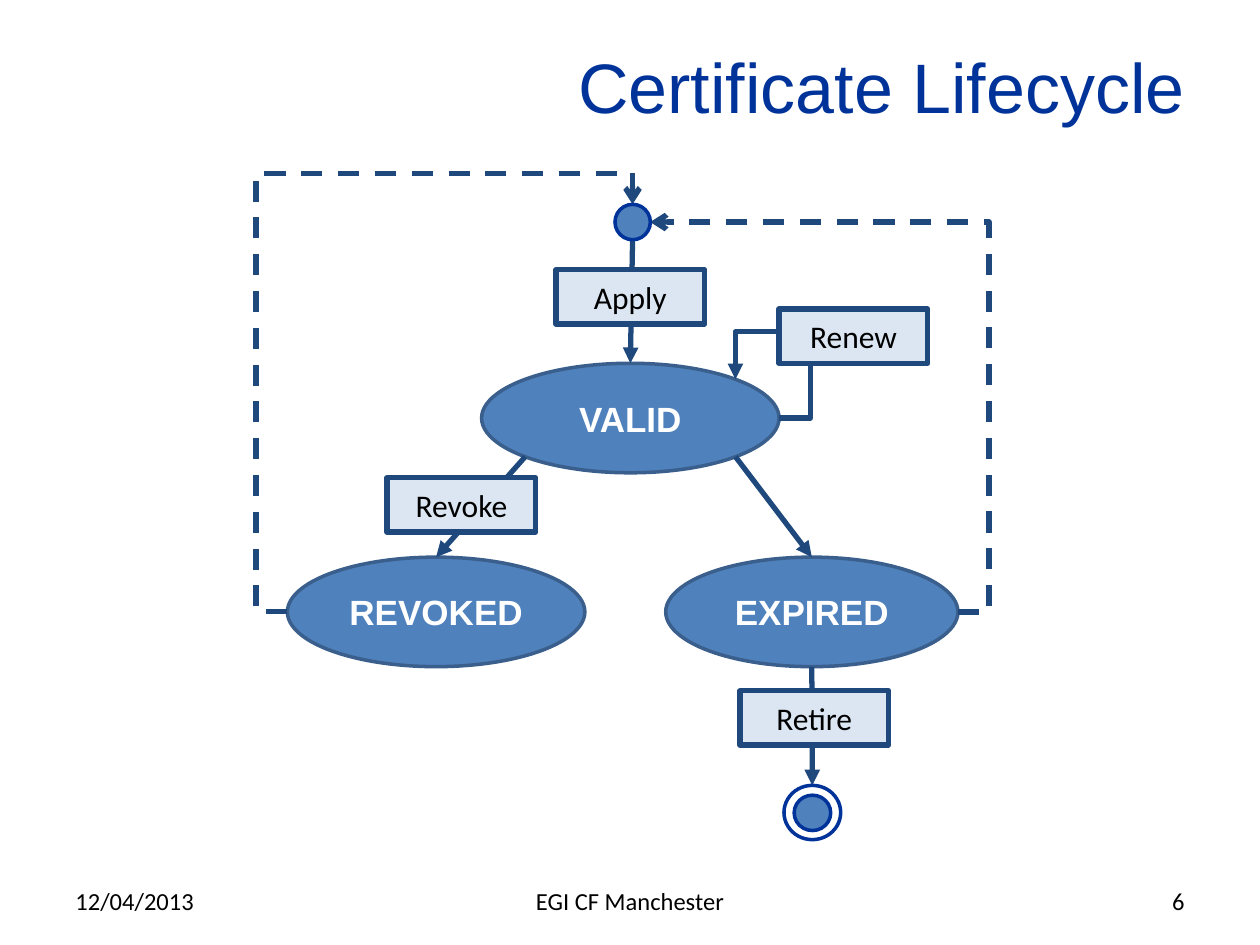
from collections import namedtuple
from math import sqrt

from pptx import Presentation
from pptx import util as u
from pptx.dml.color import RGBColor
from pptx.enum import dml, shapes, text
from pptx.oxml.ns import qn
from lxml import etree

Box = namedtuple("Box", "x y w h")
Pt = u.Pt
SHAPE = shapes.MSO_SHAPE
ALIGN = text.PP_ALIGN
ANCHOR = text.MSO_ANCHOR


class Theme:
    title = dict(name="Arial", size=40, color="003399")
    footer = dict(name="Calibri", size=14, color="000000")
    state = dict(name="Arial", size=20, color="FFFFFF", bold=True)
    action = dict(name="Calibri", size=18, color="000000")
    state_fill, state_line = "4F81BD", "3A5F8C"
    action_fill, flow = "DCE6F2", "1F497D"
    marker_line, white = "003399", "FFFFFF"
    thin, thick = 2, 3


# Compass points of an ellipse, as fractions of its box
NEAR, FAR = 0.5 - sqrt(0.125), 0.5 + sqrt(0.125)
PORTS = dict(n=(0.5, 0), s=(0.5, 1), w=(0, 0.5), e=(1, 0.5),
             ne=(FAR, NEAR), sw=(NEAR, FAR), se=(FAR, FAR))


def port(box, side):
    fx, fy = PORTS[side]
    return box.x + fx * box.w, box.y + fy * box.h


def inside(area, x, y, w, h):
    return Box(area.x + x, area.y + y, w, h)


def write(sp, words, style, align, anchor=ANCHOR.MIDDLE):
    tf = sp.text_frame
    for key, value in dict(word_wrap=True, vertical_anchor=anchor).items():
        setattr(tf, key, value)
    p = tf.paragraphs[0]
    p.alignment = align
    r = p.add_run()
    r.text = words
    font = dict(style, size=Pt(style["size"]))
    r.font.color.rgb = RGBColor.from_string(font.pop("color"))
    for key, value in font.items():
        setattr(r.font, key, value)


def add_label(s, box, words, style, align, anchor=ANCHOR.MIDDLE):
    write(s.shapes.add_textbox(*map(Pt, box)), words, style, align, anchor)


def add_node(s, kind, box, fill, line, width, words=None, style=None):
    sp = s.shapes.add_shape(kind, *map(Pt, box))
    sp.shadow.inherit = False
    sp.fill.solid()
    sp.fill.fore_color.rgb = RGBColor.from_string(fill)
    sp.line.color.rgb = RGBColor.from_string(line)
    sp.line.width = Pt(width)
    if words:
        write(sp, words, style, ALIGN.CENTER)


def add_arrow(s, start, end, via_x=None, via_y=None, head="triangle", dashed=False):
    """Straight arrow, or an elbow through the given x and y."""
    bent = via_x is not None
    kind = shapes.MSO_CONNECTOR.ELBOW if bent else shapes.MSO_CONNECTOR.STRAIGHT
    c = s.shapes.add_connector(kind, *map(Pt, start + end))
    c.line.color.rgb = RGBColor.from_string(Theme.flow)
    c.line.width = Pt(Theme.thick)
    if dashed:
        c.line.dash_style = dml.MSO_LINE.DASH
    sp_pr = c._element.spPr
    if bent:
        bends = [v for v in zip((via_x, via_y), start, end) if v[0] is not None]
        geom = sp_pr.find(qn("a:prstGeom"))
        geom.set("prst", f"bentConnector{len(bends) + 2}")
        guides = geom.find(qn("a:avLst"))
        for i, (via, a, b) in enumerate(bends, 1):
            ratio = round((via - a) / (b - a) * 100000)
            etree.SubElement(guides, qn("a:gd"), name=f"adj{i}", fmla=f"val {ratio}")
    etree.SubElement(sp_pr.find(qn("a:ln")), qn("a:tailEnd"), type=head)
    etree.SubElement(sp_pr, qn("a:effectLst"))


def add_title(s, area):
    add_label(s, area, "Certificate Lifecycle", Theme.title, ALIGN.RIGHT, ANCHOR.TOP)


def add_footer(s, area):
    for x, w, words, align in (
        (0, 168, "12/04/2013", ALIGN.LEFT),
        (210, 228, "EGI CF Manchester", ALIGN.CENTER),
        (480, 168, "6", ALIGN.RIGHT),
    ):
        add_label(s, inside(area, x, 0, w, area.h), words, Theme.footer, align)


def add_lifecycle(s, area):
    valid = inside(area, 129, 108.4, 170, 62.6)
    revoked = inside(area, 18, 219.2, 170, 62.6)
    expired = inside(area, 234.2, 219.2, 167, 62.6)
    begin = inside(area, 205.2, 17.6, 20.2, 20.2)
    finish = inside(area, 301.8, 349.6, 32.4, 31)
    core = inside(finish, 5.8, 5.6, 20.9, 20.2)

    # States
    for words, box in (("VALID", valid), ("REVOKED", revoked), ("EXPIRED", expired)):
        add_node(s, SHAPE.OVAL, box, Theme.state_fill, Theme.state_line,
                 Theme.thin, words, Theme.state)

    # Transitions
    for a, a_side, b, b_side in (
        (begin, "s", valid, "n"),
        (valid, "sw", revoked, "n"),
        (valid, "se", expired, "n"),
        (expired, "s", finish, "n"),
    ):
        add_arrow(s, port(a, a_side), port(b, b_side))
    add_arrow(s, port(valid, "e"), port(valid, "ne"), area.x + 317, area.y + 90.4)

    # Dashed ways back to the start
    back = dict(head="arrow", dashed=True)
    add_arrow(s, port(revoked, "w"), port(begin, "n"), area.x, area.y, **back)
    add_arrow(s, port(expired, "e"), port(begin, "e"), area.x + area.w, **back)

    # Actions on the transitions
    for words, x, y in (("Apply", 171.5, 55), ("Renew", 299, 77.4),
                        ("Revoke", 75, 173.9), ("Retire", 276.6, 295.6)):
        add_node(s, SHAPE.RECTANGLE, inside(area, x, y, 85, 31), Theme.action_fill,
                 Theme.flow, Theme.thick, words, Theme.action)

    # Start and end markers
    for box, fill in ((begin, Theme.state_fill), (finish, Theme.white),
                      (core, Theme.state_fill)):
        add_node(s, SHAPE.OVAL, box, fill, Theme.marker_line, Theme.thin)


def main():
    prs = Presentation()
    prs.slide_width, prs.slide_height = Pt(720), Pt(540)
    s = prs.slides.add_slide(prs.slide_layouts[6])
    add_title(s, Box(258, 21.6, 426, 90))
    add_lifecycle(s, Box(146.2, 99.2, 419, 381))
    add_footer(s, Box(36, 500.5, 648, 28.8))
    prs.save("out.pptx")


if __name__ == "__main__":
    main()
